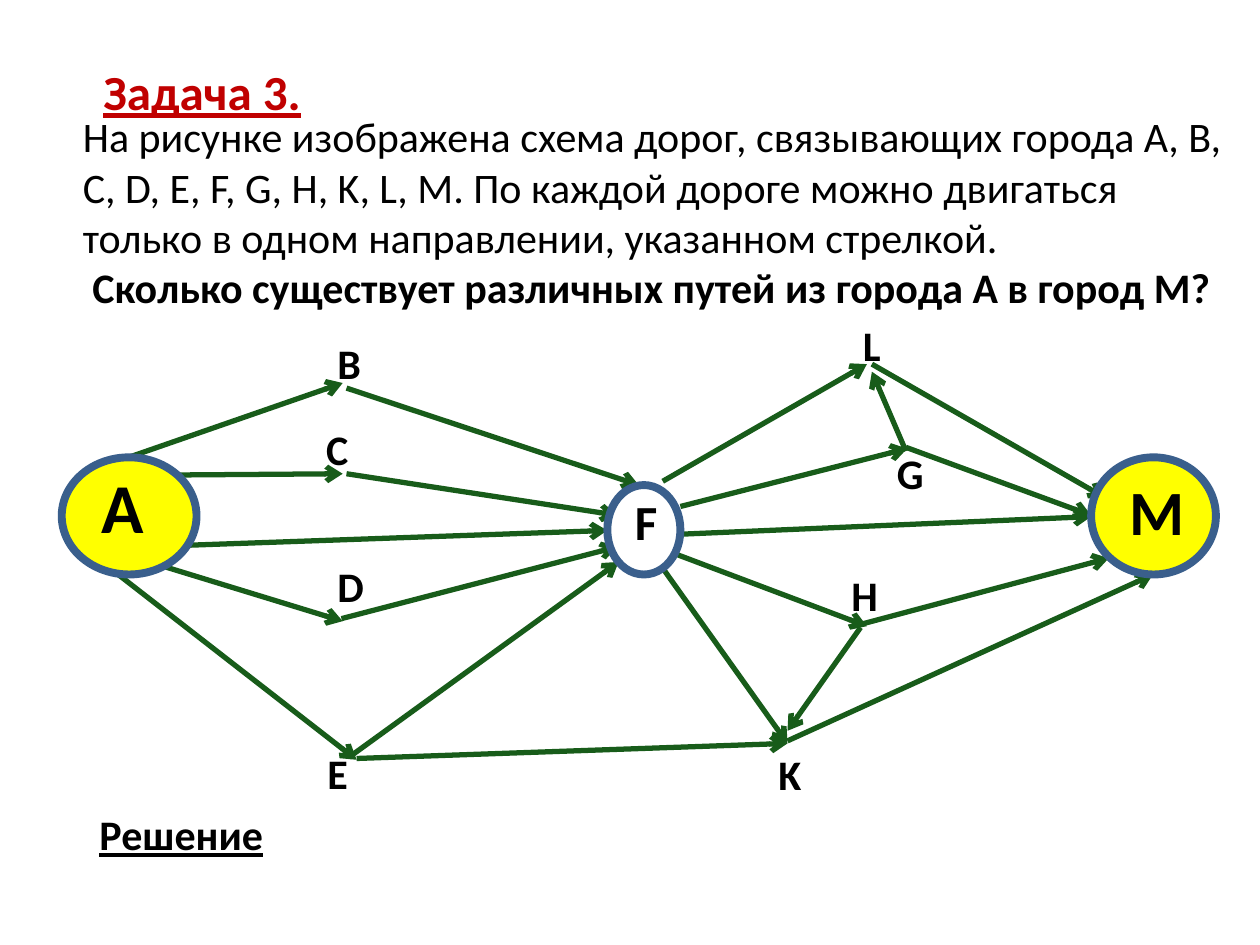
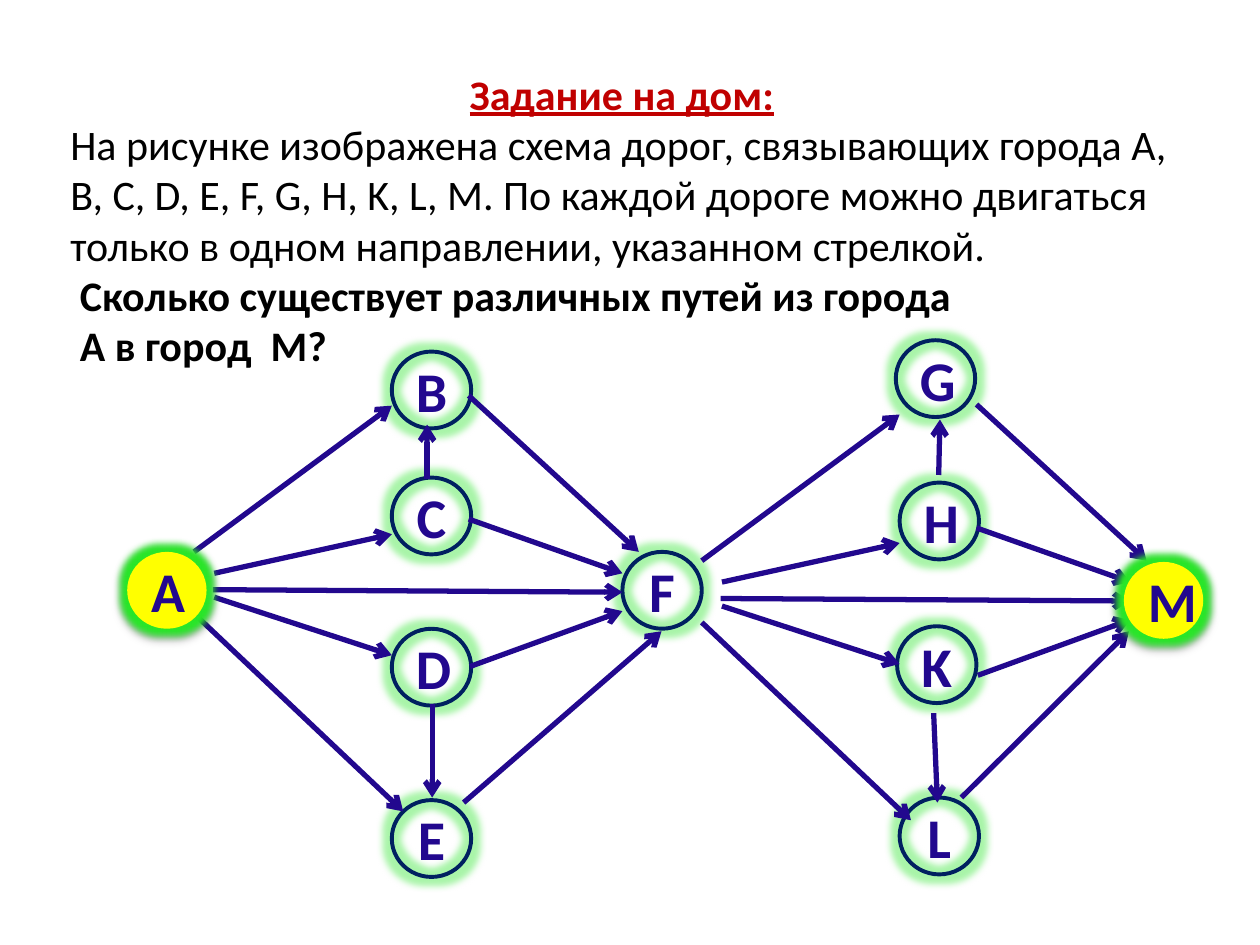
from lxml.etree import SubElement
from pptx import Presentation
from pptx.dml.color import RGBColor
from pptx.enum.shapes import MSO_CONNECTOR, MSO_SHAPE
from pptx.enum.text import MSO_ANCHOR, MSO_AUTO_SIZE, PP_ALIGN
from pptx.oxml.ns import qn
from pptx.util import Inches, Pt

"""Two slides on counting paths between towns, laid out on a grid of 100 columns by 75 rows."""

SLIDE_WIDTH, SLIDE_HEIGHT = Inches(10), Inches(7.5)
COLUMN, ROW = SLIDE_WIDTH / 100, SLIDE_HEIGHT / 75
FONT = "Calibri"
RED = RGBColor(0xC0, 0x00, 0x00)
BLACK = RGBColor(0x00, 0x00, 0x00)
WHITE = RGBColor(0xFF, 0xFF, 0xFF)
YELLOW = RGBColor(0xFF, 0xFF, 0x00)
GREEN = RGBColor(0x18, 0x5C, 0x1A)
STEEL = RGBColor(0x3A, 0x5F, 0x8C)
NAVY = RGBColor(0x00, 0x20, 0x60)
INDIGO = RGBColor(0x22, 0x08, 0x8E)
GLOW = RGBColor(0x29, 0xE6, 0x29)

CIRCLE_SIZE = (6.3, 6.1)
HALF_SHIFT = (40.3, 0.7)

TASK_LABELS = {
    "B": (25.8, 26.3), "C": (24.9, 33.1), "D": (25.8, 44), "E": (25, 58.8),
    "L": (67.5, 24.9), "G": (70.2, 35), "H": (66.6, 44.7), "K": (60.8, 58.9),
}
TASK_HUBS = [
    ("F", (48.2, 38.5, 5.8, 7.1), WHITE, (49.4, 38.5, 2.5, 6.4), 28),
    ("M", (86.6, 36.3, 9.9, 9.3), YELLOW, (88.7, 37, 4.4, 7.1), 36),
    ("A", (4.9, 36.3, 10.7, 9.3), YELLOW, (7.1, 36.3, 4.8, 7.7), 40),
]
TASK_ROADS = {
    "AB": (10.2, 36.3, 27.2, 30.4), "AC": (14, 37.7, 27.2, 37.6),
    "AF": (11.4, 43.4, 48.2, 42.1), "AD": (10.2, 44.1, 27.2, 49.3),
    "AE": (9, 45.3, 28.3, 60.3), "BF": (27.5, 30.8, 50.7, 38.5),
    "CF": (27.5, 37.6, 49, 40.9), "DF": (27.1, 49.1, 49, 43.4),
    "EF": (27.7, 60.1, 49.1, 44.6), "FL": (52.6, 38.2, 68.8, 28.9),
    "FG": (54, 40.2, 72, 35.6), "FM": (54, 42.4, 86.6, 41),
    "FH": (53.7, 44, 68.8, 49.7), "FK": (52.6, 45.1, 62.5, 59),
    "EK": (28.3, 60.2, 62.5, 59), "GL": (71.9, 35.8, 69.2, 29.5),
    "GM": (71.9, 35.5, 86.6, 40.9), "LM": (69.2, 28.9, 87.7, 39.5),
    "HM": (68.5, 49.5, 88, 44.3), "HK": (68.3, 49.8, 62.5, 58),
    "KM": (62.5, 58.8, 91.5, 45.6),
}

HOME_TOWNS = {
    "B": (31.1, 27.9), "C": (31.1, 37.9), "D": (31.1, 49.9), "E": (31.1, 63.5),
    "F": (49.4, 43.8), "G": (71.1, 27), "H": (71.4, 38.3), "K": (71.2, 49.7),
    "L": (71.4, 63.3),
}
HOME_ENDS = {"M": (89.2, 44.6), "А": (10.1, 43.8)}
HALF_ROADS = {
    "AB": (15.4, 43.8, 31.1, 32.2), "AC": (17, 45.5, 31.1, 42.4),
    "AD": (17, 47.4, 31.1, 52), "AE": (15.4, 48.7, 32, 64.4),
    "BF": (37.2, 31.4, 50.7, 43.8), "CF": (37.2, 41.2, 49.4, 45.5),
    "AF": (16.9, 46.8, 49.4, 47), "DF": (37.3, 52.9, 49.4, 48.5),
}
SINGLE_ROADS = {
    "CB": (33.9, 38, 33.9, 33.7), "DE": (34.3, 55.9, 34.3, 63.3),
    "EF": (36.8, 63.7, 52.5, 50.1), "HG": (74.5, 37.7, 74.6, 33.3),
    "KL": (74.1, 56.6, 74.4, 63.7), "LM": (76.3, 63.3, 89.6, 50.1),
}


def on_grid(*cells):
    """Turn alternating column and row values into lengths."""
    return [round(cell * (ROW if index % 2 else COLUMN)) for index, cell in enumerate(cells)]


def style_run(run, size, color, bold=False, underline=False):
    """Give a run its font."""
    run.font.name, run.font.size = FONT, Pt(size)
    run.font.bold, run.font.underline = bold, underline
    run.font.color.rgb = color


def add_title(slide, text, box, size, alignment):
    """Move and format the title placeholder."""
    title = slide.shapes.title
    title.left, title.top, title.width, title.height = on_grid(*box)
    frame = title.text_frame
    frame.text = text
    frame.word_wrap = False
    frame.auto_size = MSO_AUTO_SIZE.NONE
    frame.vertical_anchor = MSO_ANCHOR.TOP
    frame.paragraphs[0].alignment = alignment
    style_run(frame.paragraphs[0].runs[0], size, RED, True, True)


def add_text(slide, lines, box, size=24, underline=False):
    """Add a text box from pairs of text and bold flag."""
    frame = slide.shapes.add_textbox(*on_grid(*box)).text_frame
    frame.word_wrap = True
    for index, (text, bold) in enumerate(lines):
        paragraph = frame.add_paragraph() if index else frame.paragraphs[0]
        paragraph.text = text
        style_run(paragraph.runs[0], size, BLACK, bold, underline)


def add_road(slide, ends, color):
    """Draw an arrow from one town to another."""
    road = slide.shapes.add_connector(MSO_CONNECTOR.STRAIGHT, *on_grid(*ends))
    road.line.color.rgb = color
    road.line.width = Pt(3)
    properties = road._element.spPr
    SubElement(properties.find(qn("a:ln")), qn("a:tailEnd"), type="arrow")
    SubElement(properties, qn("a:effectLst"))


def add_circle(slide, box, fill=None, line=None, line_width=0):
    """Draw a flat ellipse, hollow or without outline when a colour is missing."""
    circle = slide.shapes.add_shape(MSO_SHAPE.OVAL, *on_grid(*box))
    if fill is None:
        circle.fill.background()
    else:
        circle.fill.solid()
        circle.fill.fore_color.rgb = fill
    if line is None:
        circle.line.fill.background()
    else:
        circle.line.color.rgb = line
        circle.line.width = Pt(line_width)
    circle.shadow.inherit = False
    return circle


def add_effect_color(effect, color, percent):
    """Add a colour with an opacity to an effect."""
    value = SubElement(effect, qn("a:srgbClr"), val=str(color))
    SubElement(value, qn("a:alpha"), val=str(percent * 1000))


def add_glowing_town(slide, name, corner, is_end=False):
    """Draw a lettered circle with a green glow; end towns are yellow with a shadow."""
    look = {"fill": YELLOW} if is_end else {"line": NAVY, "line_width": 2.25}
    circle = add_circle(slide, (*corner, *CIRCLE_SIZE), **look)
    effects = circle._element.spPr.find(qn("a:effectLst"))
    glow = SubElement(effects, qn("a:glow"), rad=str(Pt(8)))
    add_effect_color(glow, GLOW, 100 if is_end else 40)
    if is_end:
        shadow = SubElement(effects, qn("a:outerShdw"), blurRad=str(Pt(3.5)),
                            dist=str(Pt(2.2)), dir="5400000", rotWithShape="0")
        add_effect_color(shadow, BLACK, 32)
    frame = circle.text_frame
    frame.text = name
    frame.vertical_anchor = MSO_ANCHOR.MIDDLE
    frame.paragraphs[0].alignment = PP_ALIGN.CENTER
    style_run(frame.paragraphs[0].runs[0], 32, INDIGO, True)


def build_task(slide):
    """Build the class task with its road map."""
    add_title(slide, "Задача 3.", (7.2, 4.4, 17.9, 5.7), 28, PP_ALIGN.LEFT)
    add_text(slide, [
        ("На рисунке изображена схема дорог, связывающих города A, B, C, D, E, F, G, H, K, L, M. "
         "По каждой дороге можно двигаться только в одном направлении, указанном стрелкой.", False),
        (" Сколько существует различных путей из города A в город M?", True),
    ], (5.6, 8.3, 92.4, 17.2))
    add_text(slide, [("Решение", True)], (6.9, 63.7, 15.5, 5), underline=True)
    for ends in TASK_ROADS.values():
        add_road(slide, ends, GREEN)
    for name, corner in TASK_LABELS.items():
        add_text(slide, [(name, True)], (*corner, 2.6, 5))
    for name, circle_box, fill, label_box, size in TASK_HUBS:
        add_circle(slide, circle_box, fill, STEEL, 4.5)
        add_text(slide, [(name, True)], label_box, size)


def build_homework(slide):
    """Build the homework with its road map."""
    add_title(slide, "Задание на дом:", (4.6, 4.9, 89.5, 5), 24, PP_ALIGN.CENTER)
    add_text(slide, [
        ("На рисунке изображена схема дорог, связывающих города A, B, C, D, E, F, G, H, K, L, M. "
         "По каждой дороге можно двигаться только в одном направлении, указанном стрелкой.", False),
        (" Сколько существует различных путей из города", True),
        (" А в город  M?", True),
    ], (4.6, 8.9, 89.5, 21.2))
    for name, corner in HOME_TOWNS.items():
        add_glowing_town(slide, name, corner)
    for ends in HALF_ROADS.values():
        add_road(slide, ends, INDIGO)
        add_road(slide, [end + shift for end, shift in zip(ends, HALF_SHIFT * 2)], INDIGO)
    for ends in SINGLE_ROADS.values():
        add_road(slide, ends, INDIGO)
    for name, corner in HOME_ENDS.items():
        add_glowing_town(slide, name, corner, is_end=True)


def main():
    """Build and save the presentation."""
    presentation = Presentation()
    presentation.slide_width, presentation.slide_height = SLIDE_WIDTH, SLIDE_HEIGHT
    title_only = presentation.slide_layouts[5]
    for build in (build_task, build_homework):
        build(presentation.slides.add_slide(title_only))
    presentation.save("out.pptx")


if __name__ == "__main__":
    main()
